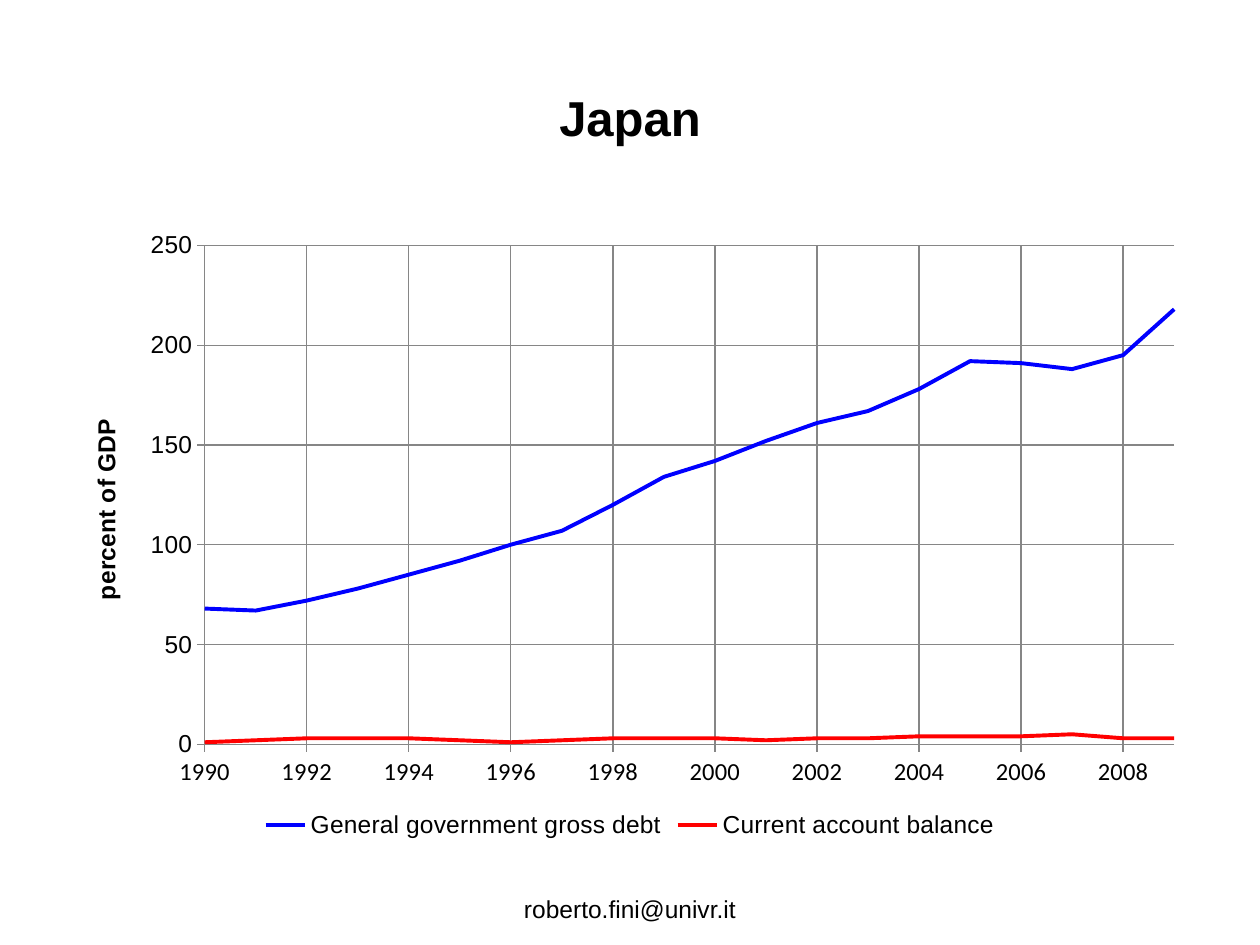
from lxml import etree
from pptx import Presentation
from pptx.chart.data import XyChartData
from pptx.dml.color import RGBColor
from pptx.enum.chart import XL_CHART_TYPE, XL_LEGEND_POSITION, XL_MARKER_STYLE, XL_TICK_MARK
from pptx.enum.text import MSO_ANCHOR, PP_ALIGN
from pptx.oxml.ns import qn
from pptx.util import Pt

SCATTER = XL_CHART_TYPE.XY_SCATTER_LINES_NO_MARKERS
BOTTOM = XL_LEGEND_POSITION.BOTTOM
NO_MARK = XL_MARKER_STYLE.NONE
OUT, NO_TICK = XL_TICK_MARK.OUTSIDE, XL_TICK_MARK.NONE
MIDDLE, CENTER = MSO_ANCHOR.MIDDLE, PP_ALIGN.CENTER

COLORS = {"text": "000000", "grid": "868686", "debt": "0000FF", "balance": "FF0000"}
FONT = "Arial"
START, END = 1990, 2009
SERIES = [
    ("General government gross debt", "debt",
     [68, 67, 72, 78, 85, 92, 100, 107, 120, 134,
      142, 152, 161, 167, 178, 192, 191, 188, 195, 218]),
    ("Current account balance", "balance",
     [1, 2, 3, 3, 3, 2, 1, 2, 3, 3, 3, 2, 3, 3, 4, 4, 4, 5, 3, 3]),
]


def color(key):
    return RGBColor.from_string(COLORS[key])


def style(font, size, bold=False, name=FONT):
    font.name, font.size, font.bold = name, Pt(size), bold
    font.color.rgb = color("text")


def add_text(slide, box, text, size, bold=False):
    frame = slide.shapes.add_textbox(*map(Pt, box)).text_frame
    frame.word_wrap = True
    frame.vertical_anchor = MIDDLE
    para = frame.paragraphs[0]
    para.alignment = CENTER
    run = para.add_run()
    run.text = text
    style(run.font, size, bold)


def set_axis(axis, low, high, step, name):
    axis.minimum_scale, axis.maximum_scale, axis.major_unit = low, high, step
    axis.major_tick_mark, axis.minor_tick_mark = OUT, NO_TICK
    axis.has_major_gridlines = True
    for line in (axis.format.line, axis.major_gridlines.format.line):
        line.color.rgb = color("grid")
        line.width = Pt(0.75)
    style(axis.tick_labels.font, 14, name=name)
    axis.tick_labels.number_format = "General"
    axis.tick_labels.number_format_is_linked = False


def set_plot(chart, **area):
    """Fix the inner plot area, as fractions of the chart."""
    plot = chart._chartSpace.find(".//" + qn("c:plotArea"))
    for old in plot.findall(qn("c:layout")):
        plot.remove(old)
    layout = etree.Element(qn("c:layout"))
    manual = etree.SubElement(layout, qn("c:manualLayout"))
    parts = {"layoutTarget": "inner", "xMode": "edge", "yMode": "edge", **area}
    for tag, value in parts.items():
        etree.SubElement(manual, qn("c:" + tag)).set("val", str(value))
    plot.insert(0, layout)


def add_graph(slide, box):
    data = XyChartData()
    for name, _, values in SERIES:
        points = data.add_series(name)
        for year, value in enumerate(values, START):
            points.add_data_point(year, value)
    chart = slide.shapes.add_chart(SCATTER, *map(Pt, box), data).chart
    style(chart.font, 14)
    chart.has_title = False
    chart.plots[0].vary_by_categories = False

    # Lines
    for series, (_, key, _) in zip(chart.plots[0].series, SERIES):
        series.smooth = False
        series.marker.style = NO_MARK
        series.format.line.color.rgb = color(key)
        series.format.line.width = Pt(2.25)

    # Axes
    set_axis(chart.category_axis, START, END, 2, "Calibri")
    set_axis(chart.value_axis, 0, 250, 50, FONT)
    para = chart.value_axis.axis_title.text_frame.paragraphs[0]
    run = para.add_run()
    run.text = "percent of GDP"
    style(run.font, 14, True)

    # Legend and plot area
    chart.has_legend = True
    chart.legend.position = BOTTOM
    chart.legend.include_in_layout = False
    style(chart.legend.font, 14)
    set_plot(chart, x=0.125, y=0.04, w=0.855, h=0.8)


def main():
    deck = Presentation()
    deck.slide_width, deck.slide_height = Pt(720), Pt(540)
    slide = deck.slides.add_slide(deck.slide_layouts[6])
    add_text(slide, (36, 21.6, 648, 90), "Japan", 28, True)
    add_graph(slide, (36, 126, 648, 356.4))
    add_text(slide, (246, 508.5, 228, 21), "roberto.fini@univr.it", 14)
    deck.save("out.pptx")


if __name__ == "__main__":
    main()
